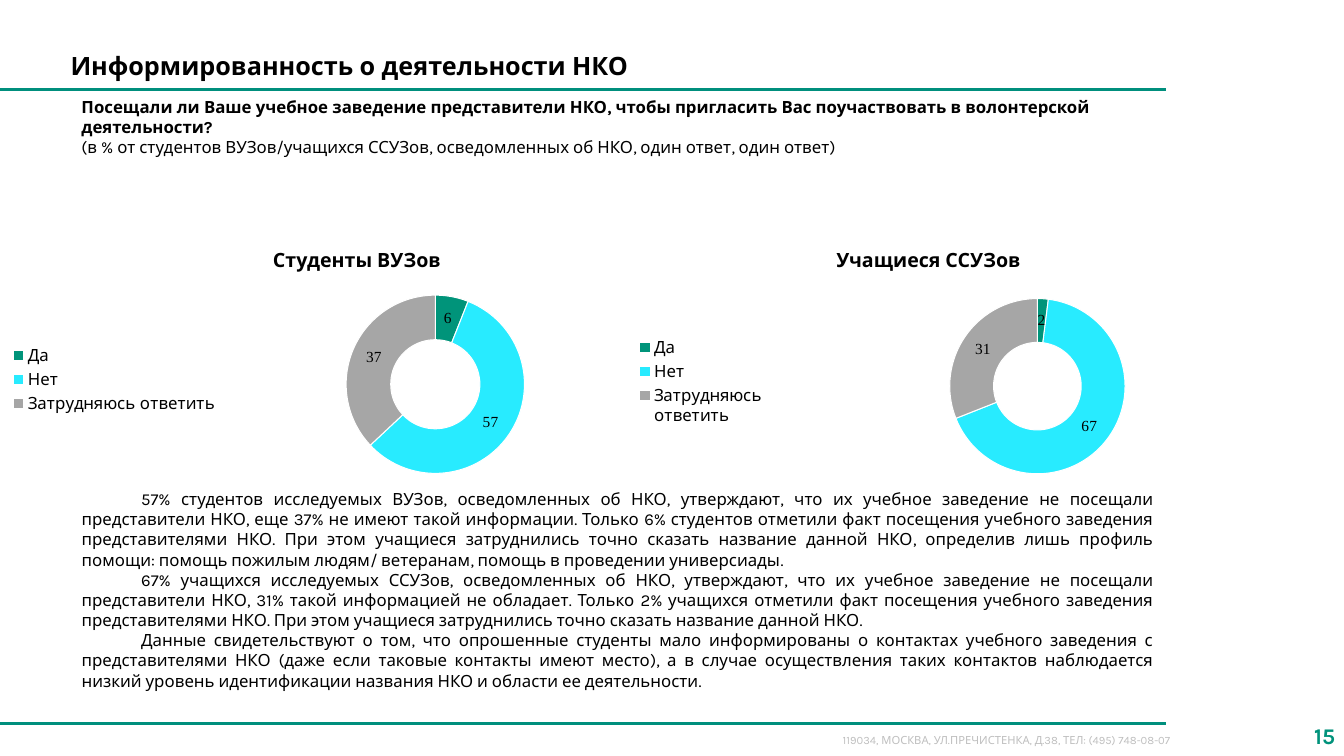
from dataclasses import dataclass

import lxml.etree
import pptx
import pptx.chart.data
import pptx.dml.color
import pptx.enum.chart
import pptx.enum.shapes
import pptx.enum.text
import pptx.oxml
import pptx.oxml.ns
import pptx.util

Inches = pptx.util.Inches
Align = pptx.enum.text.PP_ALIGN
Anchor = pptx.enum.text.MSO_ANCHOR

COLOURS = {
    "rule": "008F7D", "number": "00927B", "address": "BFBFBF", "text": "000000",
    "yes": "00947A", "no": "28EBFF", "unsure": "A6A6A6", "gap": "FFFFFF",
}
TEXT_FONT = "Karla"
CHART_FONT = "Times New Roman"
ANSWERS = {"Да": "yes", "Нет": "no", "Затрудняюсь ответить": "unsure"}


@dataclass
class Frame:
    left: float
    top: float
    width: float
    height: float

    def lengths(self) -> tuple:
        return tuple(Inches(n) for n in (self.left, self.top, self.width, self.height))


@dataclass
class Style:
    size: float
    bold: bool = False
    colour: str = "text"
    align: Align = Align.LEFT
    anchor: Anchor = Anchor.TOP


@dataclass
class Survey:
    heading: str
    heading_left: float
    frame: Frame
    shares: tuple[int, ...]


HEADING = Style(14, True, align=Align.CENTER, anchor=Anchor.MIDDLE)
SURVEYS = [
    Survey("Студенты ВУЗов", 1.19, Frame(0, 2.57, 6.35, 2.39), (6, 57, 37)),
    Survey("Учащиеся ССУЗов", 6.86, Frame(6.21, 2.61, 6, 2.35), (2, 67, 31)),
]
FINDINGS = [
    "57% студентов исследуемых ВУЗов, осведомленных об НКО, утверждают, что их учебное заведение "
    "не посещали представители НКО, еще 37% не имеют такой информации. Только 6% студентов отметили "
    "факт посещения учебного заведения представителями НКО. При этом учащиеся затруднились точно "
    "сказать название данной НКО, определив лишь профиль помощи: помощь пожилым людям/ ветеранам, "
    "помощь в проведении универсиады.",
    "67% учащихся исследуемых ССУЗов, осведомленных об НКО, утверждают, что их учебное заведение "
    "не посещали представители НКО, 31% такой информацией не обладает. Только 2% учащихся отметили "
    "факт посещения учебного заведения представителями НКО. При этом учащиеся затруднились точно "
    "сказать название данной НКО.",
    "Данные свидетельствуют о том, что опрошенные студенты мало информированы о контактах учебного "
    "заведения с представителями НКО (даже если таковые контакты имеют место), а в случае "
    "осуществления таких контактов наблюдается низкий уровень идентификации названия НКО и области "
    "ее деятельности.",
]


def rgb(name: str) -> pptx.dml.color.RGBColor:
    return pptx.dml.color.RGBColor.from_string(COLOURS[name])


def set_font(font, size: float, name: str = TEXT_FONT, colour: str = "text", bold: bool = False) -> None:
    font.size, font.name, font.bold = pptx.util.Pt(size), name, bold
    font.color.rgb = rgb(colour)


def fill_text(box, frame: Frame, lines: list[str], style: Style) -> None:
    box.left, box.top, box.width, box.height = frame.lengths()
    text = box.text_frame
    text.text = "\n".join(lines)
    text.word_wrap = True
    text.auto_size = pptx.enum.text.MSO_AUTO_SIZE.NONE
    text.vertical_anchor = style.anchor
    for para in text.paragraphs:
        para.alignment = style.align
        para.space_before = pptx.util.Pt(0)
        set_font(para.font, style.size, colour=style.colour, bold=style.bold)


def add_text(page, frame: Frame, lines: list[str], style: Style):
    box = page.shapes.add_textbox(*frame.lengths())
    fill_text(box, frame, lines, style)
    return box


def add_rule(page, top: float) -> None:
    rule = page.shapes.add_connector(
        pptx.enum.shapes.MSO_CONNECTOR.STRAIGHT, 0, Inches(top), Inches(11.56), Inches(top))
    rule.line.color.rgb = rgb("rule")
    rule.line.width = pptx.util.Pt(2)
    lxml.etree.SubElement(rule._element.spPr, pptx.oxml.ns.qn("a:effectLst"))


def chart_layout(frame: Frame, inner: bool = False):
    target = '<c:layoutTarget val="inner"/>' if inner else ""
    return pptx.oxml.parse_xml(
        f'<c:layout {pptx.oxml.ns.nsdecls("c")}><c:manualLayout>{target}'
        '<c:xMode val="edge"/><c:yMode val="edge"/>'
        f'<c:x val="{frame.left}"/><c:y val="{frame.top}"/>'
        f'<c:w val="{frame.width}"/><c:h val="{frame.height}"/>'
        '</c:manualLayout></c:layout>')


def add_doughnut(page, survey: Survey) -> None:
    data = pptx.chart.data.CategoryChartData(number_format="#,##0")
    data.categories = list(ANSWERS)
    data.add_series("Series 1", survey.shares)
    chart = page.shapes.add_chart(
        pptx.enum.chart.XL_CHART_TYPE.DOUGHNUT, *survey.frame.lengths(), data).chart
    chart.has_title = False
    set_font(chart.font, 10.5, CHART_FONT)

    # Legend and plot positions, as shares of the chart area
    chart.has_legend = True
    legend = chart.legend
    legend.position = pptx.enum.chart.XL_LEGEND_POSITION.LEFT
    legend.include_in_layout = False
    set_font(legend.font, 12)
    legend._element.find(pptx.oxml.ns.qn("c:legendPos")).addnext(
        chart_layout(Frame(0.08, 0.17, 0.36, 0.42)))
    plot_area = chart._chartSpace.chart.plotArea
    for layout in plot_area.findall(pptx.oxml.ns.qn("c:layout")):
        plot_area.remove(layout)
    plot_area.insert(0, chart_layout(Frame(0.49, 0.15, 0.38, 0.74), inner=True))

    # Slices and their values
    plot = chart.plots[0]
    plot.vary_by_categories = True
    plot._element.find(pptx.oxml.ns.qn("c:holeSize")).set("val", "50")
    plot.has_data_labels = True
    labels = plot.data_labels
    labels.show_value = True
    labels.show_percentage = False
    labels.number_format, labels.number_format_is_linked = "#,##0", False
    set_font(labels.font, 11, CHART_FONT)
    for index, colour in enumerate(ANSWERS.values()):
        slice_format = plot.series[0].points[index].format
        slice_format.fill.solid()
        slice_format.fill.fore_color.rgb = rgb(colour)
        slice_format.line.color.rgb = rgb("gap")
        slice_format.line.width = pptx.util.Pt(0.75)


def main() -> None:
    deck = pptx.Presentation()
    deck.slide_width, deck.slide_height = Inches(13.33), Inches(7.5)
    page = deck.slides.add_slide(deck.slide_layouts[1])

    # Header and footer
    for top in (0.89, 7.18):
        add_rule(page, top)
    fill_text(page.shapes.title, Frame(0.6, 0.45, 11.35, 0.4),
              ["Информированность о деятельности НКО"], Style(18, True))
    add_text(page, Frame(8.26, 7.23, 3.84, 0.24),
             ["119034, МОСКВА, УЛ.ПРЕЧИСТЕНКА, Д.38, ТЕЛ: (495) 748-08-07"], Style(8, colour="address"))
    add_text(page, Frame(12.65, 7.1, 0.69, 0.4), ["15"],
             Style(16, True, "number", Align.RIGHT, Anchor.MIDDLE))

    # Survey question
    question = add_text(page, Frame(0.71, 0.91, 10.79, 0.5), [
        "Посещали ли Ваше учебное заведение представители НКО, чтобы пригласить Вас поучаствовать "
        "в волонтерской деятельности?",
        "(в % от студентов ВУЗов/учащихся ССУЗов, осведомленных об НКО, один ответ, один ответ)",
    ], Style(12, True))
    question.text_frame.paragraphs[1].font.bold = False

    # Answers by group
    for survey in SURVEYS:
        add_doughnut(page, survey)
        add_text(page, Frame(survey.heading_left, 2.41, 4.7, 0.34), [survey.heading], HEADING)

    # Findings
    body = page.placeholders[1]
    fill_text(body, Frame(0.71, 4.8, 10.84, 2.12), FINDINGS, Style(12, align=Align.JUSTIFY))
    for para in body.text_frame.paragraphs:
        properties = para._p.get_or_add_pPr()
        properties.set("marL", "0")
        properties.set("indent", str(Inches(0.59)))
        properties.insert_element_before(
            properties.makeelement(pptx.oxml.ns.qn("a:buNone")), "a:tabLst", "a:defRPr", "a:extLst")

    deck.save("out.pptx")


if __name__ == "__main__":
    main()
